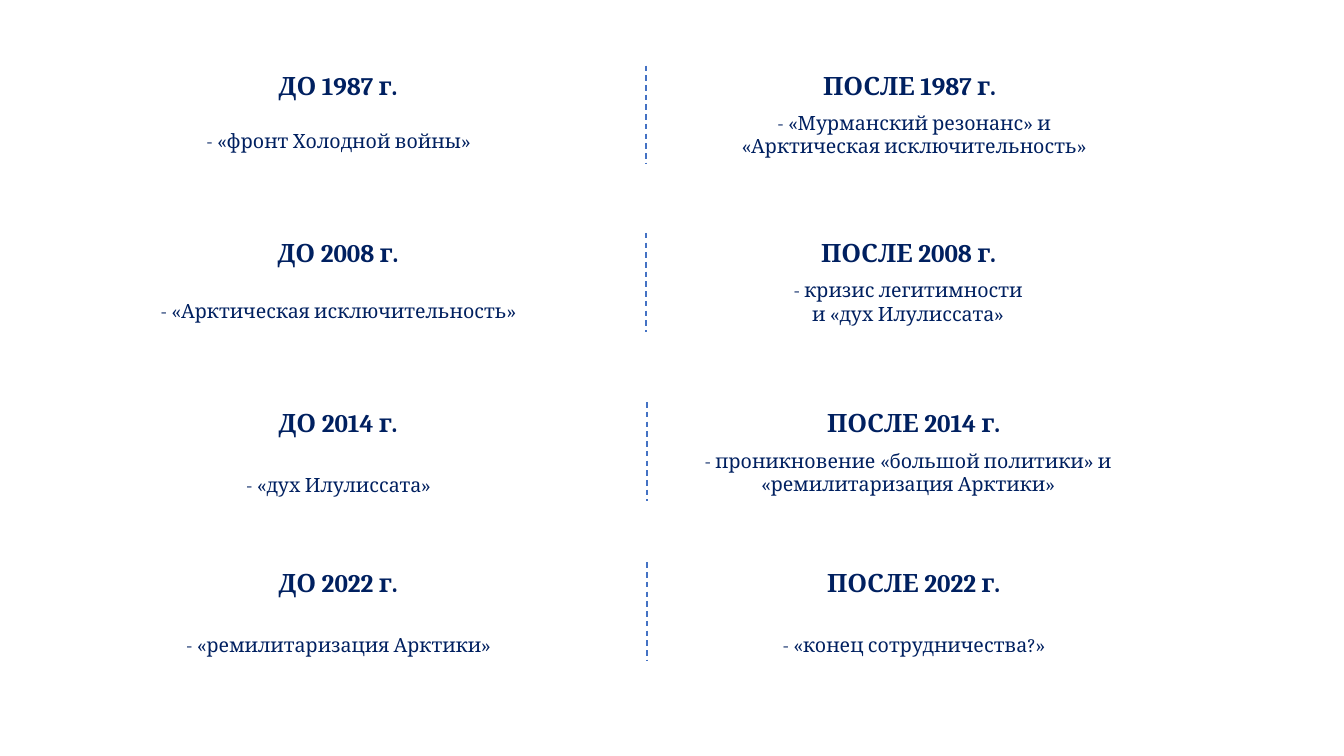
from dataclasses import dataclass

from lxml import etree
from pptx import Presentation
from pptx.dml.color import RGBColor
from pptx.enum.dml import MSO_LINE
from pptx.enum.shapes import MSO_CONNECTOR
from pptx.enum.text import MSO_AUTO_SIZE, PP_ALIGN
from pptx.oxml.ns import qn
from pptx.util import Pt

CENTER = PP_ALIGN.CENTER
GROW = MSO_AUTO_SIZE.SHAPE_TO_FIT_TEXT
STRAIGHT = MSO_CONNECTOR.STRAIGHT
DASH = MSO_LINE.DASH
BLANK_LAYOUT = 6


@dataclass(frozen=True)
class Theme:
    font: str = "Cambria"
    text: RGBColor = RGBColor(0x00, 0x20, 0x60)
    divider: RGBColor = RGBColor(0x44, 0x72, 0xC4)
    heading_size: float = 18
    note_size: float = 14
    divider_width: float = 1


@dataclass(frozen=True)
class Note:
    lines: tuple
    left: float
    drop: float  # distance below the top of the period
    height: float = 24.3


@dataclass(frozen=True)
class Period:
    year: int
    top: float
    divider_x: float
    after_left: float
    before: Note
    after: Note


THEME = Theme()

# Layout in points
SLIDE_WIDTH, SLIDE_HEIGHT = 960, 540
HEADING_WIDTH, HEADING_HEIGHT = 375, 29
NOTE_WIDTH = 309.6
TWO_LINES = 41.2
DIVIDER_HEIGHT = 70.6
BEFORE_LEFT = 54
BEFORE_NOTE_LEFT = 87.1

PERIODS = (
    Period(1987, 46.8, 461.5, 462.2,
           Note(("- «фронт Холодной войны»",), BEFORE_NOTE_LEFT, 41.8),
           Note(("- «Мурманский резонанс» и", "«Арктическая исключительность»"),
                498.2, 28.8, TWO_LINES)),
    Period(2008, 166.3, 461.5, 461.5,
           Note(("- «Арктическая исключительность»",), BEFORE_NOTE_LEFT, 43.9),
           Note(("- кризис легитимности", "и «дух Илулиссата»"),
                493.9, 28.8, TWO_LINES)),
    Period(2014, 287.3, 462.2, 465.1,
           Note(("- «дух Илулиссата»",), BEFORE_NOTE_LEFT, 46.8),
           Note(("- проникновение «большой политики» и «ремилитаризация Арктики»",),
                493.9, 29.5, TWO_LINES)),
    Period(2022, 401.8, 462.2, 465.1,
           Note(("- «ремилитаризация Арктики»",), BEFORE_NOTE_LEFT, 46.8),
           Note(("- «конец сотрудничества?»",), 498.2, 46.8)),
)


def add_text(slide, lines, left, top, width, height, size, bold=False):
    shape = slide.shapes.add_textbox(Pt(left), Pt(top), Pt(width), Pt(height))
    frame = shape.text_frame
    frame.word_wrap = True
    frame.auto_size = GROW
    paragraph = frame.paragraphs[0]
    paragraph.alignment = CENTER
    for index, line in enumerate(lines):
        if index:
            paragraph.add_line_break()
        run = paragraph.add_run()
        run.text = line
        run.font.name = THEME.font
        run.font.size = Pt(size)
        run.font.bold = bold
        run.font.color.rgb = THEME.text


def add_heading(slide, text, left, top):
    add_text(slide, (text,), left, top, HEADING_WIDTH, HEADING_HEIGHT,
             THEME.heading_size, bold=True)


def add_note(slide, note, period_top):
    add_text(slide, note.lines, note.left, period_top + note.drop,
             NOTE_WIDTH, note.height, THEME.note_size)


def add_divider(slide, x, top):
    connector = slide.shapes.add_connector(
        STRAIGHT, Pt(x), Pt(top), Pt(x), Pt(top + DIVIDER_HEIGHT))
    connector.line.color.rgb = THEME.divider
    connector.line.width = Pt(THEME.divider_width)
    connector.line.dash_style = DASH
    # An empty effect list switches the shadow off
    etree.SubElement(connector._element.spPr, qn("a:effectLst"))


def add_period(slide, period):
    add_divider(slide, period.divider_x, period.top)
    add_heading(slide, f"ДО {period.year} г.", BEFORE_LEFT, period.top)
    add_heading(slide, f"ПОСЛЕ {period.year} г.", period.after_left, period.top)
    add_note(slide, period.before, period.top)
    add_note(slide, period.after, period.top)


def main():
    presentation = Presentation()
    presentation.slide_width = Pt(SLIDE_WIDTH)
    presentation.slide_height = Pt(SLIDE_HEIGHT)
    slide = presentation.slides.add_slide(presentation.slide_layouts[BLANK_LAYOUT])

    # One row per turning point: before on the left, after on the right
    for period in PERIODS:
        add_period(slide, period)

    presentation.save("out.pptx")


if __name__ == "__main__":
    main()
